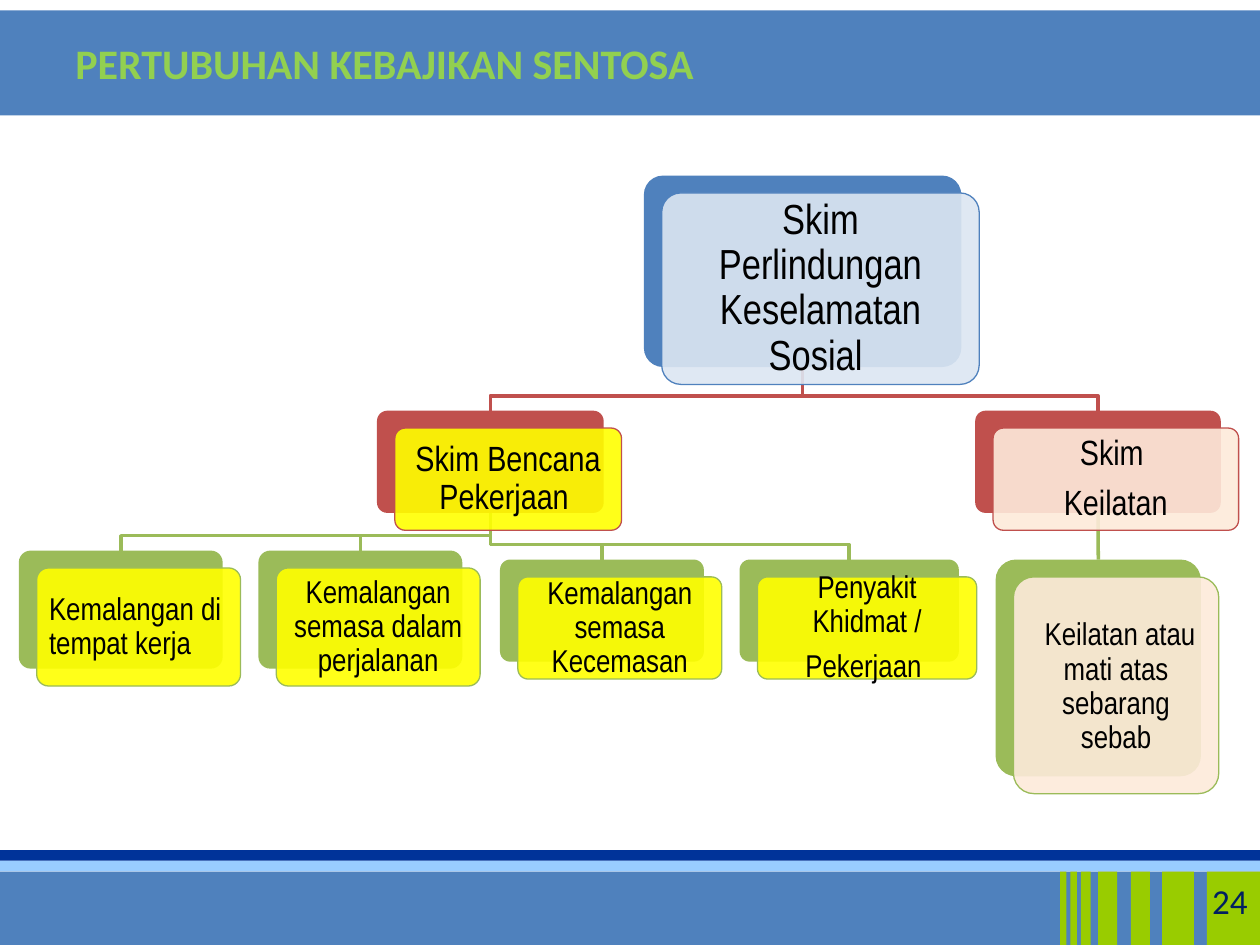
import pptx
import pptx.dml.color
import pptx.enum.shapes
import pptx.enum.text
import pptx.oxml.ns
import pptx.util
import lxml.etree

Cm, Pt = pptx.util.Cm, pptx.util.Pt
Kind = pptx.enum.shapes.MSO_SHAPE
Side = pptx.enum.text.PP_ALIGN
Mid = pptx.enum.text.MSO_ANCHOR.MIDDLE
Top = pptx.enum.text.MSO_ANCHOR.TOP

HUES = {
    "blue": "4F81BD", "navy": "003399", "sky": "99CCFF", "lime": "99CC00",
    "title": "92D050", "page": "002060", "red": "C0504D", "green": "9BBB59",
    "pale": "DCE6F2", "yellow": "FFFF00", "peach": "FDEADA", "black": "000000",
}


def hue(name):
    return pptx.dml.color.RGBColor.from_string(HUES[name])


def sub(node, tag, **attrs):
    return lxml.etree.SubElement(node, pptx.oxml.ns.qn(tag), **attrs)


class Deck:
    body = "Arial Narrow"
    head = "Calibri"
    shift = (0.36, 0.35)  # front card relative to its back card
    drop = 0.3            # crossbar height above the child card

    def __init__(self):
        self.prs = pptx.Presentation()
        self.prs.slide_width, self.prs.slide_height = Cm(25.4), Cm(19.05)
        self.slide = self.prs.slides.add_slide(self.prs.slide_layouts[6])
        self.shapes = self.slide.shapes

    def block(self, kind, left, top, wide, high, fill):
        shape = self.shapes.add_shape(kind, Cm(left), Cm(top), Cm(wide), Cm(high))
        shape.shadow.inherit = False
        shape.fill.solid()
        shape.fill.fore_color.rgb = hue(fill)
        shape.line.fill.background()
        return shape

    def bar(self, left, top, wide, high, fill):
        return self.block(Kind.RECTANGLE, left, top, wide, high, fill)

    def card(self, left, top, wide, high, fill):
        shape = self.block(Kind.ROUNDED_RECTANGLE, left, top, wide, high, fill)
        shape.adjustments[0] = 0.1
        return shape

    def front(self, box, fill, edge, paras, side=Side.CENTER):
        """Add the see-through card with text; paras holds lists of (text, size)."""
        left, top, wide, high = box
        shape = self.card(left + self.shift[0], top + self.shift[1], wide, high, fill)
        tint = shape.fill._xPr.find(".//" + pptx.oxml.ns.qn("a:srgbClr"))
        sub(tint, "a:alpha", val="90000")
        shape.line.color.rgb = hue(edge)
        shape.line.width = Pt(0.75)
        frame = shape.text_frame
        size = paras[0][0][1]
        self.setup(frame, [size / 100] * 4, Mid)
        for num, runs in enumerate(paras):
            para = frame.add_paragraph() if num else frame.paragraphs[0]
            para.alignment = side
            para.line_spacing = 0.9
            para.space_after = Pt(0.35 * size)
            for text, size in runs:
                self.run(para, text, size, self.body, "black")

    def setup(self, frame, pads, place):
        frame.word_wrap = True
        frame.vertical_anchor = place
        (frame.margin_left, frame.margin_top,
         frame.margin_right, frame.margin_bottom) = map(Cm, pads)

    def run(self, para, text, size, face, tone, bold=False):
        run = para.add_run()
        run.text = text
        run.font.size = Pt(size)
        run.font.name = face
        run.font.bold = bold
        run.font.color.rgb = hue(tone)

    def label(self, box, text, size, tone, side, place, bold=False, inset=0.25):
        frame = self.shapes.add_textbox(*map(Cm, box)).text_frame
        self.setup(frame, [inset, 0.13, 0.25, 0.13], place)
        para = frame.paragraphs[0]
        para.alignment = side
        self.run(para, text, size, self.head, tone, bold)

    def link(self, above, below, tone):
        """Join the bottom of one card to the top of another."""
        start = above.left + above.width // 2, above.top + above.height
        end = below.left + below.width // 2, below.top
        if abs(start[0] - end[0]) < Cm(0.1):
            line = self.shapes.add_connector(
                pptx.enum.shapes.MSO_CONNECTOR.STRAIGHT, *start, *end)
            line.begin_connect(above, 2)
            line.end_connect(below, 0)
            sub(line._element.spPr, "a:effectLst")
        else:
            bend = end[1] - Cm(self.drop)
            pen = self.shapes.build_freeform(*start, scale=1.0)
            pen.add_line_segments([(start[0], bend), (end[0], bend), end], close=False)
            line = pen.convert_to_shape()
            line.shadow.inherit = False
            line.fill.background()
        line.line.color.rgb = hue(tone)
        line.line.width = Pt(2)


def main():
    deck = Deck()
    for top, high, fill in [(17.35, 0.22, "sky"), (17.14, 0.21, "navy"),
                            (17.57, 1.48, "blue"), (0.21, 2.12, "blue")]:
        deck.bar(0, top, 25.4, high, fill)
    for left, wide in [(24.33, 1.07), (23.43, 0.64), (22.8, 0.38), (22.14, 0.38),
                       (21.79, 0.2), (21.58, 0.13), (21.37, 0.13)]:
        deck.bar(left, 17.57, wide, 1.48, "lime")
    deck.label((0, 0.62, 22.86, 1.3), "PERTUBUHAN KEBAJIKAN SENTOSA", 24,
               "title", Side.LEFT, Top, bold=True, inset=1.52)
    deck.label((19.48, 17.65, 5.92, 1.02), "24", 20, "page", Side.RIGHT, Mid)

    # name: parent, box, back colour, front colour, paragraphs
    tree = {
        "root": (None, (12.98, 3.54, 6.4, 3.86), "blue", "pale",
                 [[("Skim Perlindungan Keselamatan Sosial ", 24)]]),
        "work": ("root", (7.6, 8.28, 4.57, 2.06), "red", "yellow",
                 [[("Skim Bencana Pekerjaan ", 20)]]),
        "site": ("work", (0.38, 11.1, 4.11, 2.38), "green", "yellow",
                 [[("Kemalangan di tempat kerja", 18)]]),
        "trip": ("work", (5.21, 11.1, 4.11, 2.38), "green", "yellow",
                 [[("Kemalangan semasa dalam perjalanan", 18)]]),
        "crisis": ("work", (10.08, 11.28, 4.11, 2.06), "green", "yellow",
                   [[("Kemalangan semasa Kecemasan", 18)]]),
        "illness": ("work", (14.91, 11.28, 4.42, 2.06), "green", "yellow",
                    [[("Penyakit Khidmat /", 18)], [("Pekerjaan ", 18)]]),
        "invalid": ("root", (19.66, 8.28, 4.95, 2.06), "red", "peach",
                    [[("Skim ", 20)], [("Keilatan", 20)]]),
        "cause": ("invalid", (20.07, 11.28, 4.14, 4.37), "green", "peach",
                  [[(" ", 20), ("Keilatan atau mati atas sebarang sebab", 18)]]),
    }
    backs = {name: deck.card(*box, tone)
             for name, (_, box, tone, _, _) in tree.items()}
    for name, (above, _, tone, _, _) in tree.items():
        if above:
            deck.link(backs[above], backs[name], tone)
    for name, (_, box, tone, fill, paras) in tree.items():
        side = Side.LEFT if name == "site" else Side.CENTER
        deck.front(box, fill, tone, paras, side)

    deck.prs.save("out.pptx")


if __name__ == "__main__":
    main()
